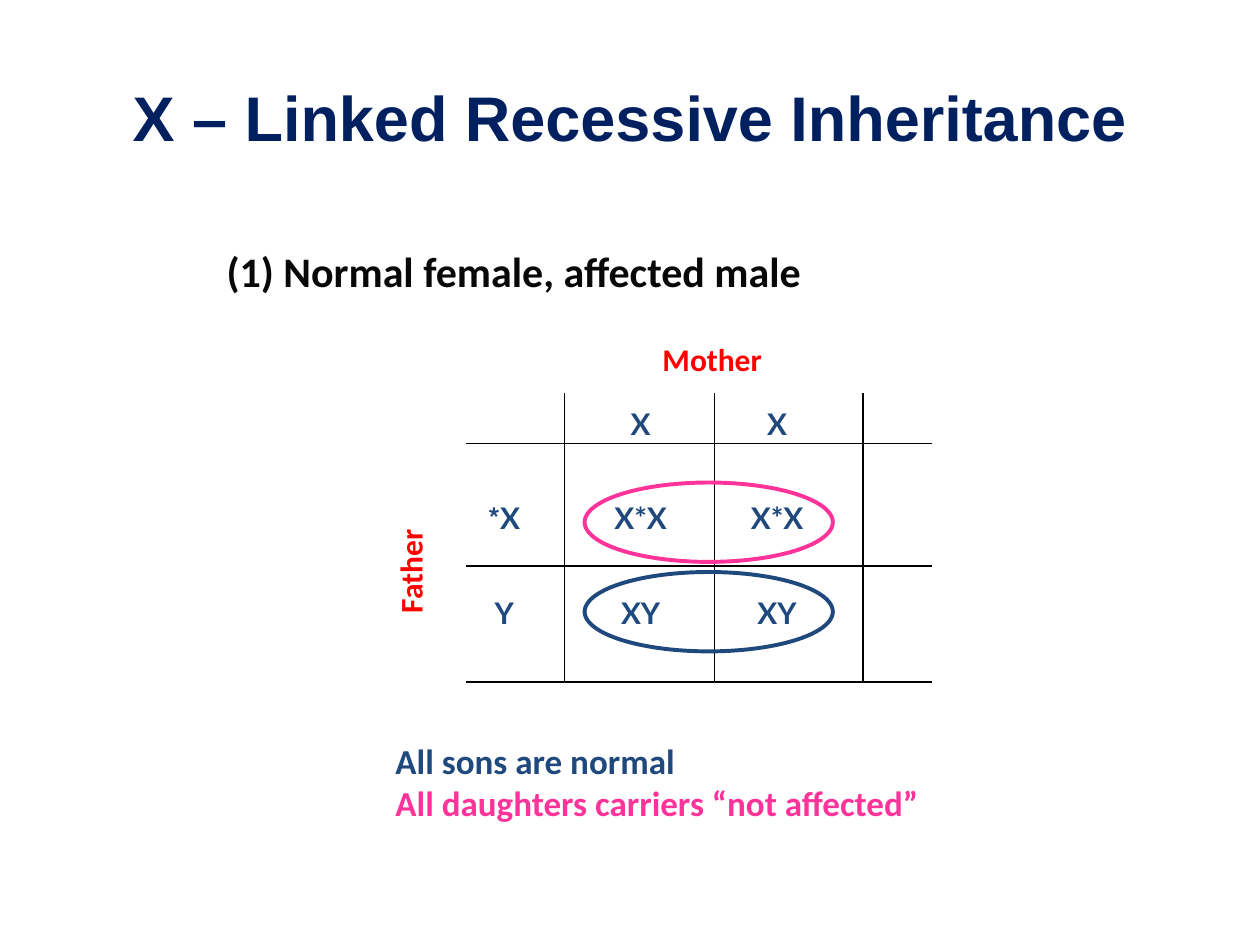
import pptx
import pptx.util
import pptx.dml.color
import pptx.enum.shapes
import pptx.enum.text
import pptx.oxml.xmlchemy
from lxml import etree
from pptx.util import Inches

COLORS = {"title": "002060", "heading": "080808", "parent": "FF0000",
          "son": "1F497D", "daughter": "FF3399", "grid": "000000"}
TITLE = "X – Linked Recessive Inheritance"
CROSSES = [["", "X", "X"], ["X*", "X*X", "X*X"], ["Y", "XY", "XY"]]
TABLE_BOX = (3.46, 2.89, 3.25, 2.25)
LABELS = [
    ((1.7, 1.9, 6.62, 0.5), 24, 0, True,
     [("(1) Normal female, affected male", "heading")]),
    ((5.16, 2.65, 1.04, 0.4), 18, 0, False, [("Mother", "parent")]),
    ((3.04, 5.82, 5.25, 0.77), 20, 0, False,
     [("All sons are normal", "son"),
      ("All daughters carriers “not affected”", "daughter")]),
    ((2.77, 4.28, 0.97, 0.4), 18, 270, False, [("Father", "parent")]),
]
GRID_X, GRID_Y = (4.48, 5.67, 6.85), (3.52, 4.49, 5.41)
GRID_LEFT, GRID_RIGHT, GRID_TOP = 3.7, 7.4, 3.12
RINGS = [("son", 4.54), ("daughter", 3.83)]


def color(name):
    return pptx.dml.color.RGBColor.from_string(COLORS[name])


def format_runs(paragraph, font_name, size, color_name):
    for run in paragraph.runs:
        run.font.name = font_name
        run.font.size = pptx.util.Pt(size)
        run.font.bold = True
        run.font.color.rgb = color(color_name)


def add_title(slide):
    title = slide.shapes.title
    title.left, title.top, title.width, title.height = map(Inches, (0.5, 0.3, 9, 1.25))
    title.text_frame.text = TITLE
    title.text_frame.vertical_anchor = pptx.enum.text.MSO_ANCHOR.MIDDLE
    paragraph = title.text_frame.paragraphs[0]
    paragraph.alignment = pptx.enum.text.PP_ALIGN.CENTER
    format_runs(paragraph, "Arial", 36, "title")


def add_crosses(slide):
    table = slide.shapes.add_table(3, 3, *map(Inches, TABLE_BOX)).table
    table.first_row = table.horz_banding = False
    for row, texts in enumerate(CROSSES):
        for column, text in enumerate(texts):
            cell = table.cell(row, column)
            cell.fill.background()
            cell.margin_top = Inches(0.33)
            cell.text_frame.text = text
            paragraph = cell.text_frame.paragraphs[0]
            paragraph.alignment = pptx.enum.text.PP_ALIGN.CENTER
            paragraph._p.get_or_add_pPr().set("rtl", "1")
            format_runs(paragraph, "Lato", 17, "son")


def add_label(slide, box, size, rotation, wrap, lines):
    label = slide.shapes.add_textbox(*map(Inches, box))
    label.rotation = rotation
    frame = label.text_frame
    frame.word_wrap = wrap
    frame.auto_size = pptx.enum.text.MSO_AUTO_SIZE.SHAPE_TO_FIT_TEXT
    frame.text = "\n".join(text for text, _ in lines)
    for paragraph, (_, color_name) in zip(frame.paragraphs, lines):
        format_runs(paragraph, "Calibri", size, color_name)


def add_line(slide, *ends):
    line = slide.shapes.add_connector(
        pptx.enum.shapes.MSO_CONNECTOR.STRAIGHT, *map(Inches, ends))
    line.line.color.rgb = color("grid")
    line.line.width = pptx.util.Pt(1)
    etree.SubElement(line._element.spPr, pptx.oxml.ns.qn("a:effectLst"))


def add_ring(slide, color_name, top):
    ring = slide.shapes.add_shape(
        pptx.enum.shapes.MSO_SHAPE.OVAL, *map(Inches, (4.64, top, 1.97, 0.63)))
    ring.shadow.inherit = False
    ring.fill.background()
    ring.line.color.rgb = color(color_name)
    ring.line.width = pptx.util.Pt(2.25)


def main():
    presentation = pptx.Presentation()
    presentation.slide_width, presentation.slide_height = Inches(10), Inches(7.5)
    slide = presentation.slides.add_slide(presentation.slide_layouts[5])
    add_title(slide)
    add_crosses(slide)
    for label in LABELS:
        add_label(slide, *label)
    for x in GRID_X:
        add_line(slide, x, GRID_TOP, x, GRID_Y[-1])
    for y in GRID_Y:
        add_line(slide, GRID_LEFT, y, GRID_RIGHT, y)
    for ring in RINGS:
        add_ring(slide, *ring)
    presentation.save("out.pptx")


if __name__ == "__main__":
    main()
